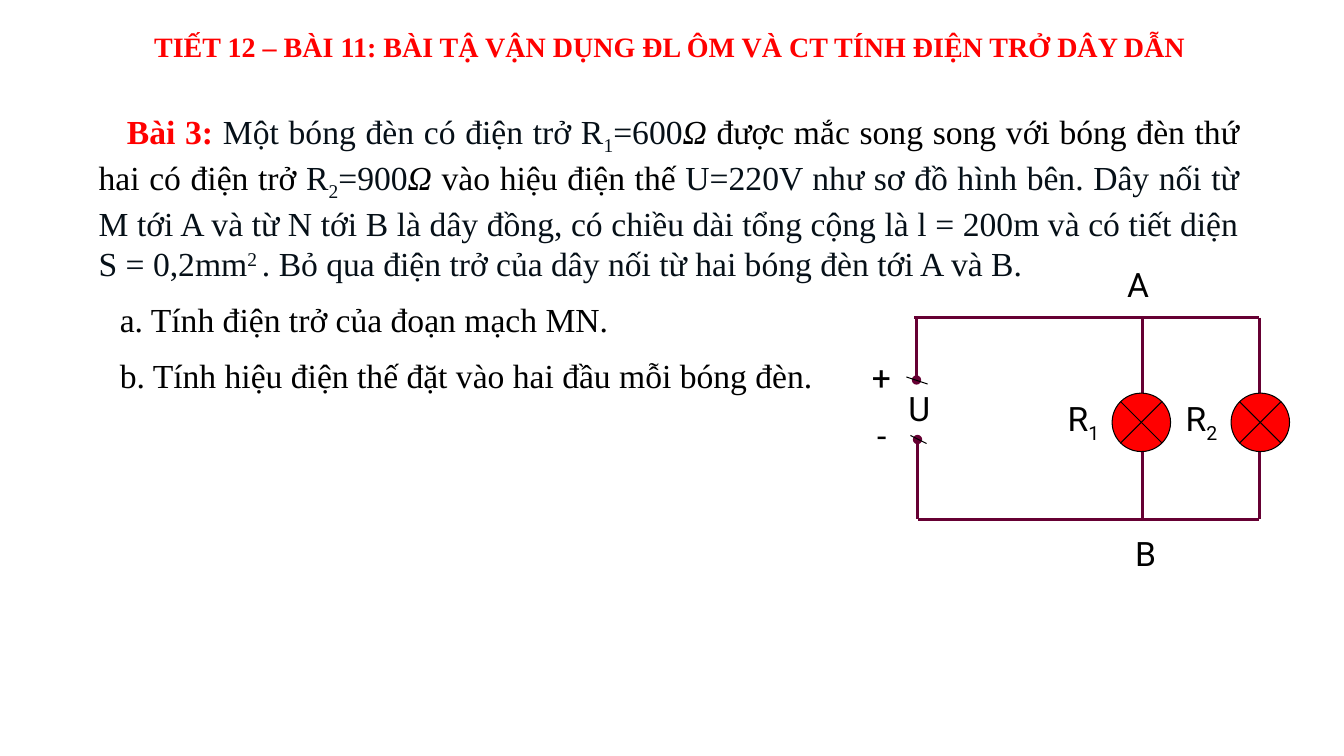
from lxml.etree import SubElement
from pptx import Presentation
from pptx.dml.color import RGBColor
from pptx.enum.shapes import MSO_CONNECTOR, MSO_SHAPE
from pptx.enum.text import MSO_AUTO_SIZE, PP_ALIGN
from pptx.oxml.ns import qn
from pptx.util import Emu, Pt

COLORS = {"red": "FF0000", "ink": "061018", "black": "000000", "wire": "660033"}
PX = 9144  # one hundredth of an inch
SERIF, SANS = "Times New Roman", "Roboto"
SUB, SUPER = -25, 30


def color(name):
    return RGBColor.from_string(COLORS[name])


class CircuitSlide:
    def __init__(self, presentation):
        self.slide = presentation.slides.add_slide(presentation.slide_layouts[6])
        self.shapes = self.slide.shapes

    def lengths(self, *values):
        return [Emu(value * PX) for value in values]

    def text(self, box, runs, font=SERIF, size=24, align=PP_ALIGN.LEFT, indent=0):
        """Add one paragraph; each run is (text, colour, format values)."""
        frame = self.shapes.add_textbox(*self.lengths(*box)).text_frame
        frame.word_wrap = True
        frame.auto_size = MSO_AUTO_SIZE.SHAPE_TO_FIT_TEXT
        paragraph = frame.paragraphs[0]
        paragraph.alignment = align
        if indent:
            paragraph._p.get_or_add_pPr().set("indent", str(indent * PX))
        for content, ink, extra in runs:
            run = paragraph.add_run()
            run.text = content
            run.font.color.rgb = color(ink)
            values = {"name": font, "size": Pt(size), **extra}
            baseline = values.pop("baseline", 0)
            for key, value in values.items():
                setattr(run.font, key, value)
            if baseline:
                run._r.get_or_add_rPr().set("baseline", str(baseline * 1000))

    def label(self, left, top, name, index="", width=42):
        runs = [(name, "black", {})]
        if index:
            runs.append((index, "black", {"baseline": SUB}))
        self.text((left, top, width, 51), runs, font=SANS)

    def line(self, ends, ink="wire", weight=2.25, dot=None):
        """Add a straight line; dot is headEnd or tailEnd for a round terminal."""
        connector = self.shapes.add_connector(MSO_CONNECTOR.STRAIGHT, *self.lengths(*ends))
        connector.line.color.rgb = color(ink)
        connector.line.width = Pt(weight)
        if dot:
            SubElement(connector.line._get_or_add_ln(), qn("a:" + dot), type="oval")
        SubElement(connector._element.spPr, qn("a:effectLst"))

    def lamp(self, left, top, size):
        shape = self.shapes.add_shape(MSO_SHAPE.FLOWCHART_SUMMING_JUNCTION,
                                      *self.lengths(left, top, size, size))
        shape.shadow.inherit = False
        shape.fill.solid()
        shape.fill.fore_color.rgb = color("red")
        shape.line.color.rgb = color("black")
        shape.line.width = Pt(0.75)


def add_problem(page):
    bold, italic = {"bold": True}, {"italic": True}
    page.text((143, 24, 1280, 44), [
        ("TIẾT 12 – BÀI 11: BÀI TẬ VẬN DỤNG ĐL ÔM VÀ CT TÍNH ĐIỆN TRỞ DÂY DẪN", "red", bold),
    ], size=20, align=PP_ALIGN.JUSTIFY)
    page.text((88, 105, 1151, 172), [
        ("Bài 3: ", "red", bold),
        ("Một bóng đèn có điện trở R", "ink", {}),
        ("1", "ink", {"baseline": SUB}),
        ("=600", "ink", {}),
        ("Ω ", "black", italic),
        ("được mắc song song với bóng đèn thứ hai có điện trở", "black", {}),
        (" R", "ink", {}),
        ("2", "ink", {"baseline": SUB}),
        ("=900", "ink", {}),
        ("Ω ", "black", italic),
        ("vào hiệu điện thế", "black", {}),
        (" U=220V như sơ đồ hình bên. Dây nối từ M tới A và từ N tới B là dây đồng, "
         "có chiều dài tổng cộng là l = 200m và có tiết diện S = 0,2mm", "ink", {}),
        ("2 ", "ink", {"baseline": SUPER}),
        (". Bỏ qua điện trở của dây nối từ hai bóng đèn tới A và B.", "ink", {}),
    ], align=PP_ALIGN.JUSTIFY, indent=28)
    for top, width, question in (
        (292, 636, "a. Tính điện trở của đoạn mạch MN."),
        (347, 967, "b. Tính hiệu điện thế đặt vào hai đầu mỗi bóng đèn."),
    ):
        page.text((109, top, width, 50), [(question, "black", {})], align=PP_ALIGN.JUSTIFY)


def add_circuit(page):
    top, bottom, right = 315, 515, 1249
    lamp_top, lamp_size = 390, 58
    page.line((907, top, right, top))
    page.line((910, bottom, right, bottom))
    page.line((909, top, 909, 377), dot="tailEnd")
    page.line((910, 436, 910, bottom), dot="headEnd")
    for tick in ((920, 381, 899, 374), (919, 440, 903, 432)):
        page.line(tick, ink="black", weight=0.75)

    for branch, lamp_left in ((1133, 1103), (right, 1221)):
        page.line((branch, top, branch, lamp_top))
        page.line((branch, lamp_top + lamp_size, branch, bottom))
        page.lamp(lamp_left, lamp_top, lamp_size)

    for left, label_top, name in (
        (1108, 257, "A"), (1116, 524, "B"), (855, 349, "+"), (860, 407, "-"), (891, 380, "U"),
    ):
        page.label(left, label_top, name)
    page.label(1049, lamp_top, "R", "1", width=58)
    page.label(1166, lamp_top, "R", "2", width=75)


def main():
    presentation = Presentation()
    presentation.slide_width, presentation.slide_height = Emu(1333 * PX), Emu(750 * PX)
    page = CircuitSlide(presentation)
    add_problem(page)
    add_circuit(page)
    presentation.save("out.pptx")


if __name__ == "__main__":
    main()
